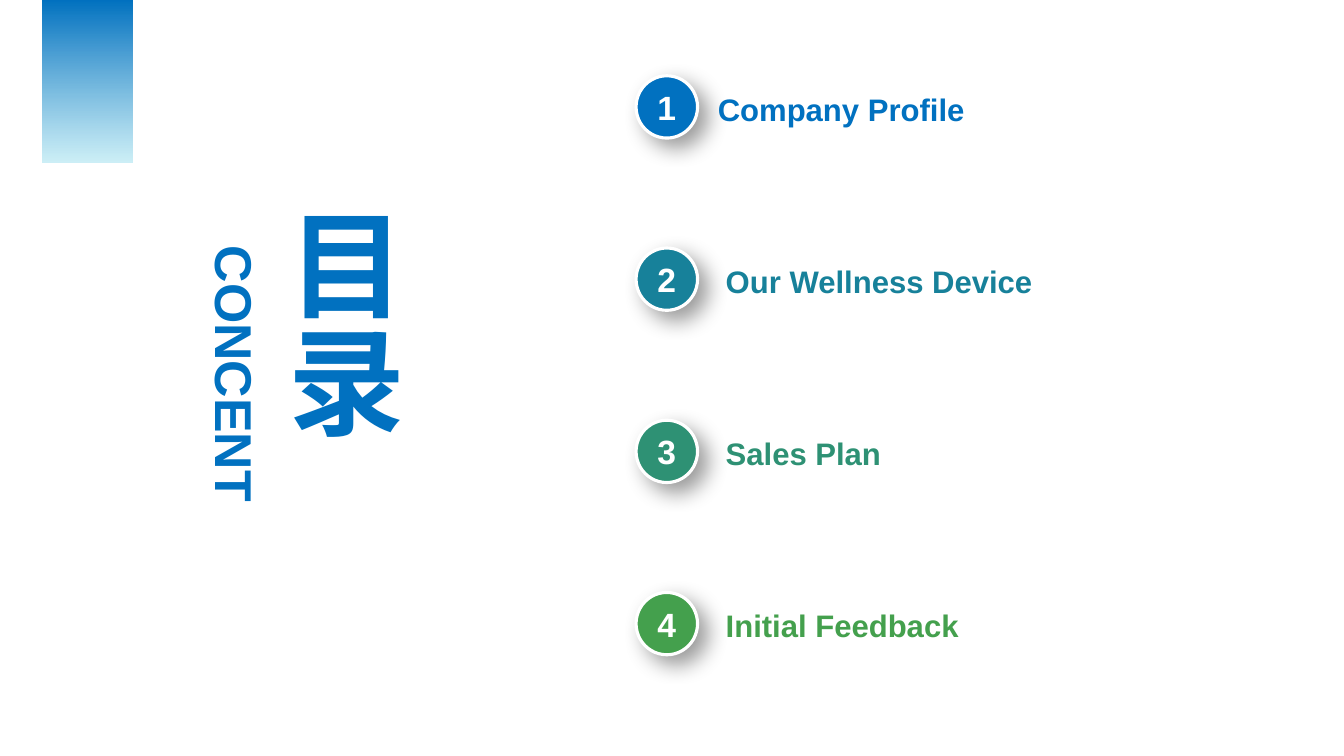
from lxml.etree import SubElement
from pptx import Presentation
from pptx.dml.color import RGBColor
from pptx.enum.shapes import MSO_SHAPE
from pptx.enum.text import MSO_ANCHOR, PP_ALIGN
from pptx.oxml.ns import qn
from pptx.util import Cm, Pt

COLORS = {
    "blue": "0171C0",
    "teal": "17819A",
    "jade": "2E9174",
    "green": "44A04D",
    "ice": "C5EDF6",
    "white": "FFFFFF",
    "black": "000000",
}
AGENDA = [
    ("Company Profile", "blue", 17.84),
    ("Our Wellness Device", "teal", 18.04),
    ("Sales Plan", "jade", 18.04),
    ("Initial Feedback", "green", 18.04),
]
FIRST_TOP = 1.91
ROW_PITCH = 4.34


def color(name):
    return RGBColor.from_string(COLORS[name])


def write_text(shape, text, size, color_name, font="Arial", align=PP_ALIGN.LEFT,
               anchor=MSO_ANCHOR.TOP, bottom=0.13, line_spacing=None, vertical=None):
    frame = shape.text_frame
    frame.word_wrap = True
    frame.vertical_anchor = anchor
    frame.margin_left = frame.margin_right = Cm(0.25)
    frame.margin_top = Cm(0.13)
    frame.margin_bottom = Cm(bottom)
    if vertical:
        frame._txBody.bodyPr.set("vert", vertical)
    paragraph = frame.paragraphs[0]
    paragraph.alignment = align
    paragraph.line_spacing = line_spacing
    run = paragraph.add_run()
    run.text = text
    run.font.name = font
    run.font.size = Pt(size)
    run.font.bold = True
    run.font.color.rgb = color(color_name)
    SubElement(run.font._element, qn("a:ea"), typeface=font)


class AgendaSlide:
    def __init__(self, presentation, font):
        self.slide = presentation.slides.add_slide(presentation.slide_layouts[6])
        self.font = font

    def shape(self, kind, left, top, width, height):
        shape = self.slide.shapes.add_shape(kind, Cm(left), Cm(top), Cm(width), Cm(height))
        shape.shadow.inherit = False
        return shape

    def gradient_bar(self, left, top, width, height, start, end, end_opacity):
        bar = self.shape(MSO_SHAPE.RECTANGLE, left, top, width, height)
        bar.line.fill.background()
        bar.fill.gradient()
        bar.fill.gradient_angle = 270
        stops = bar.fill.gradient_stops
        for stop, name, position in zip(stops, (start, end), (0, 1)):
            stop.color.rgb = color(name)
            stop.position = position
        last_color = bar._element.spPr.findall(".//" + qn("a:srgbClr"))[-1]
        SubElement(last_color, qn("a:alpha"), val=str(end_opacity * 1000))

    def text(self, text, left, top, width, height, rotation=0, **text_format):
        box = self.slide.shapes.add_textbox(Cm(left), Cm(top), Cm(width), Cm(height))
        box.rotation = rotation
        write_text(box, text, font=self.font, **text_format)

    def badge(self, text, left, top, fill):
        badge = self.shape(MSO_SHAPE.OVAL, left, top, 1.55, 1.57)
        badge.fill.solid()
        badge.fill.fore_color.rgb = color(fill)
        badge.line.color.rgb = color("white")
        badge.line.width = Pt(2.25)
        self.drop_shadow(badge)
        write_text(badge, text, size=24, color_name="white", font=self.font,
                   align=PP_ALIGN.CENTER, anchor=MSO_ANCHOR.MIDDLE)

    def drop_shadow(self, shape):
        effects = shape._element.spPr.find(qn("a:effectLst"))
        shadow = SubElement(effects, qn("a:outerShdw"), blurRad=str(Pt(16)),
                            dist=str(Pt(9)), dir=str(45 * 60000),
                            algn="tl", rotWithShape="0")
        tone = SubElement(shadow, qn("a:srgbClr"), val=COLORS["black"])
        SubElement(tone, qn("a:alpha"), val="40000")


def main():
    presentation = Presentation()
    presentation.slide_width = Cm(33.87)
    presentation.slide_height = Cm(19.05)
    agenda = AgendaSlide(presentation, font="Arial")

    agenda.gradient_bar(1.07, 0, 2.28, 4.1, "blue", "ice", end_opacity=86)
    agenda.text("目录", 6.76, 5.08, 3.76, 9.98, size=83.6, color_name="blue",
                anchor=MSO_ANCHOR.MIDDLE, vertical="eaVert")
    agenda.text("CONCENT", 1.45, 8.53, 8.69, 1.78, rotation=90, size=37,
                color_name="blue", align=PP_ALIGN.CENTER, line_spacing=0.9)

    for index, (title, color_name, left) in enumerate(AGENDA):
        top = FIRST_TOP + index * ROW_PITCH
        agenda.badge(str(index + 1), 16.03, top, color_name)
        agenda.text(title, left, top + 0.26, 9.83, 1.04, size=22.2,
                    color_name=color_name, anchor=MSO_ANCHOR.BOTTOM, bottom=0)

    presentation.save("out.pptx")


if __name__ == "__main__":
    main()
